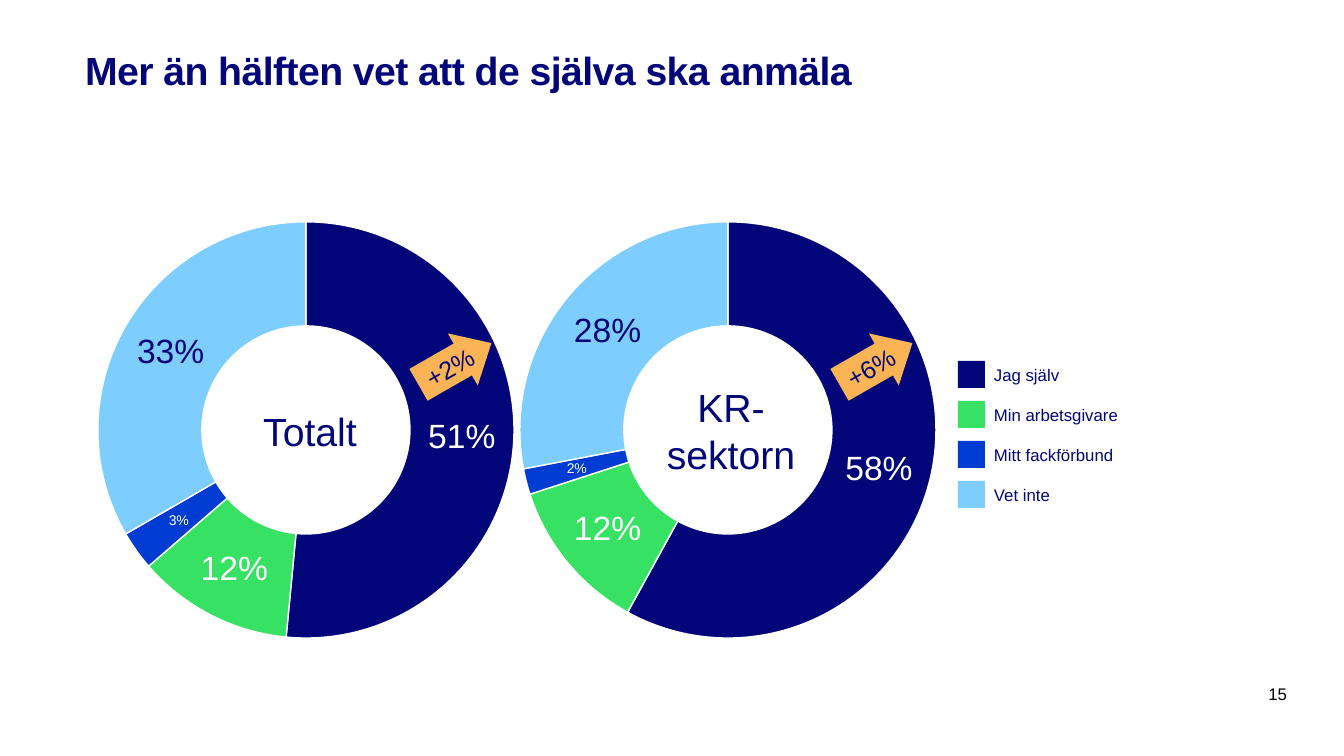
"""Builds a slide with two doughnut charts on who knows they must report themselves."""
from lxml import etree
from pptx import Presentation
from pptx import util as u
from pptx.chart import data as chart_data
from pptx.dml import color
from pptx.enum import chart as charts, shapes, text
from pptx.oxml import ns

PX = 914400 / 100.8
NAVY, GREEN, BLUE, SKY = "020678", "37E164", "003CD2", "7DCDFF"
ORANGE, WHITE, BLACK = "FAB455", "FFFFFF", "000000"
ANSWERS = [("Jag själv", NAVY), ("Min arbetsgivare", GREEN),
           ("Mitt fackförbund", BLUE), ("Vet inte", SKY)]
DOUGHNUTS = [
    ("Totalt", (0.51, 0.12, 0.03, 0.33), "+2%", 84, 230, 425),
    ("KR-\vsektorn", (0.58, 0.12, 0.02, 0.28), "+6%", 506, 651, 846),
]


def style(font, size, hex_color):
    font.name = "Arial"
    font.size = u.Pt(size)
    font.color.rgb = color.RGBColor.from_string(hex_color)


def write(box, words, size, hex_color, align, anchor, insets=(0, 0, 0, 0)):
    frame = box.text_frame
    frame.word_wrap = True
    frame.vertical_anchor = anchor
    (frame.margin_left, frame.margin_top,
     frame.margin_right, frame.margin_bottom) = [round(n * PX) for n in insets]
    para = frame.paragraphs[0]
    para.text = words
    para.alignment = align
    style(para.font, size, hex_color)
    return para


deck = Presentation()
deck.slide_width, deck.slide_height = round(1344 * PX), round(756 * PX)
page = deck.slides.add_slide(deck.slide_layouts[5])

title = page.shapes.title
title.left, title.top, title.width, title.height = [round(n * PX) for n in (85, 46, 1101, 113)]
para = write(title, "Mer än hälften vet att de själva ska anmäla", 28, NAVY,
             text.PP_ALIGN.LEFT, text.MSO_ANCHOR.TOP)
para.font.bold = True
para.runs[0]._r.get_or_add_rPr().set("spc", "-40")

for name, values, change, chart_left, name_left, arrow_left in DOUGHNUTS:
    answers = chart_data.CategoryChartData(number_format="0%")
    answers.categories = ["1", "2", "3", "4"]
    answers.add_series("Series 1", values)
    chart = page.shapes.add_chart(
        charts.XL_CHART_TYPE.DOUGHNUT,
        *[round(n * PX) for n in (chart_left, 188, 453, 484)], answers).chart
    chart.has_title = False
    chart.has_legend = False
    style(chart.font, 10, BLACK)

    plot = chart.plots[0]
    plot.vary_by_categories = False
    plot._element.find(ns.qn("c:holeSize")).set("val", "55")
    area = plot._element.getparent()
    for old in area.findall(ns.qn("c:layout")):
        area.remove(old)
    layout = etree.Element(ns.qn("c:layout"))
    manual = etree.SubElement(layout, ns.qn("c:manualLayout"))
    for tag, value in [("layoutTarget", "inner"), ("xMode", "edge"), ("yMode", "edge"),
                       ("x", "0.03"), ("y", "0.07"), ("w", "0.92"), ("h", "0.86")]:
        etree.SubElement(manual, ns.qn("c:" + tag)).set("val", value)
    area.insert(0, layout)

    series = plot.series[0]
    for index, (answer, fill) in enumerate(ANSWERS):
        point = series.points[index]
        point.format.fill.solid()
        point.format.fill.fore_color.rgb = color.RGBColor.from_string(fill)
        point.format.line.color.rgb = color.RGBColor.from_string(WHITE)
        point.format.line.width = u.Pt(1)
    labels = series.data_labels
    labels.show_value = True
    labels.number_format = "0%"
    labels.number_format_is_linked = False
    style(labels.font, 24, WHITE)
    style(series.points[2].data_label.font, 10, WHITE)
    style(series.points[3].data_label.font, 24, NAVY)

    box = page.shapes.add_textbox(*[round(n * PX) for n in (name_left, 380, 160, 101)])
    write(box, name, 28, NAVY, text.PP_ALIGN.CENTER, text.MSO_ANCHOR.MIDDLE)

    arrow = page.shapes.add_shape(shapes.MSO_SHAPE.UP_ARROW,
                                  *[round(n * PX) for n in (arrow_left, 322, 60, 84)])
    arrow.adjustments[0], arrow.adjustments[1] = 0.61, 0.55
    arrow.rotation = 60.2
    arrow.shadow.inherit = False
    arrow.fill.solid()
    arrow.fill.fore_color.rgb = color.RGBColor.from_string(ORANGE)
    arrow.line.fill.background()
    write(arrow, change, 18, NAVY, text.PP_ALIGN.CENTER, text.MSO_ANCHOR.MIDDLE, (10, 0, 10, 8))
    arrow.text_frame._txBody.bodyPr.set("vert", "vert270")

for row, (answer, fill) in enumerate(ANSWERS):
    top = 361 + 40 * row
    swatch = page.shapes.add_shape(shapes.MSO_SHAPE.RECTANGLE,
                                   *[round(n * PX) for n in (958, top, 27, 27)])
    swatch.shadow.inherit = False
    swatch.fill.solid()
    swatch.fill.fore_color.rgb = color.RGBColor.from_string(fill)
    swatch.line.fill.background()
    box = page.shapes.add_textbox(*[round(n * PX) for n in (984, top, 327, 27)])
    write(box, answer, 12, NAVY, text.PP_ALIGN.LEFT, text.MSO_ANCHOR.MIDDLE, (10, 5, 10, 5))

number = page.shapes.add_textbox(*[round(n * PX) for n in (1212, 684, 75, 20)])
write(number, "15", 12, BLACK, text.PP_ALIGN.RIGHT, text.MSO_ANCHOR.BOTTOM)

deck.save("out.pptx")
